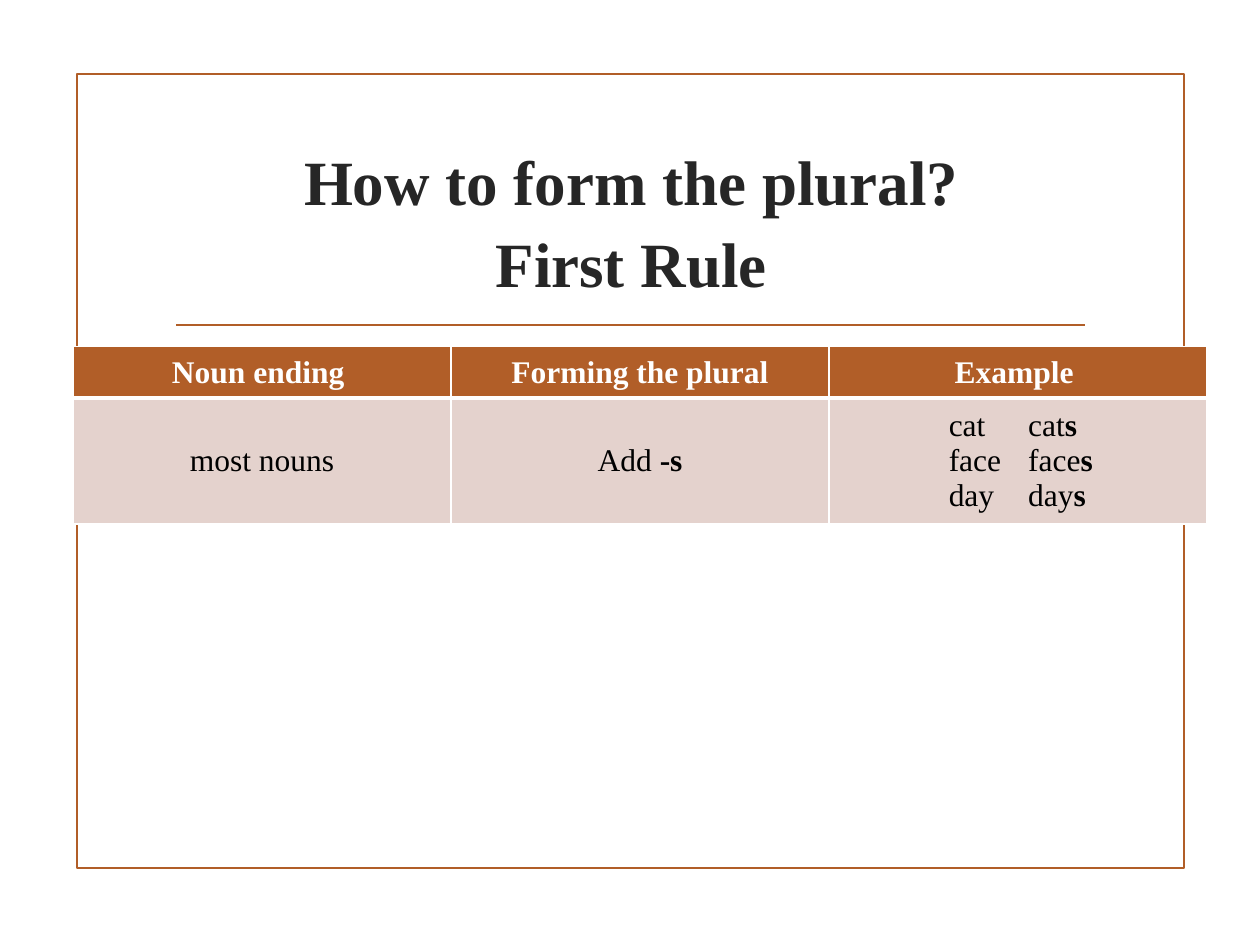
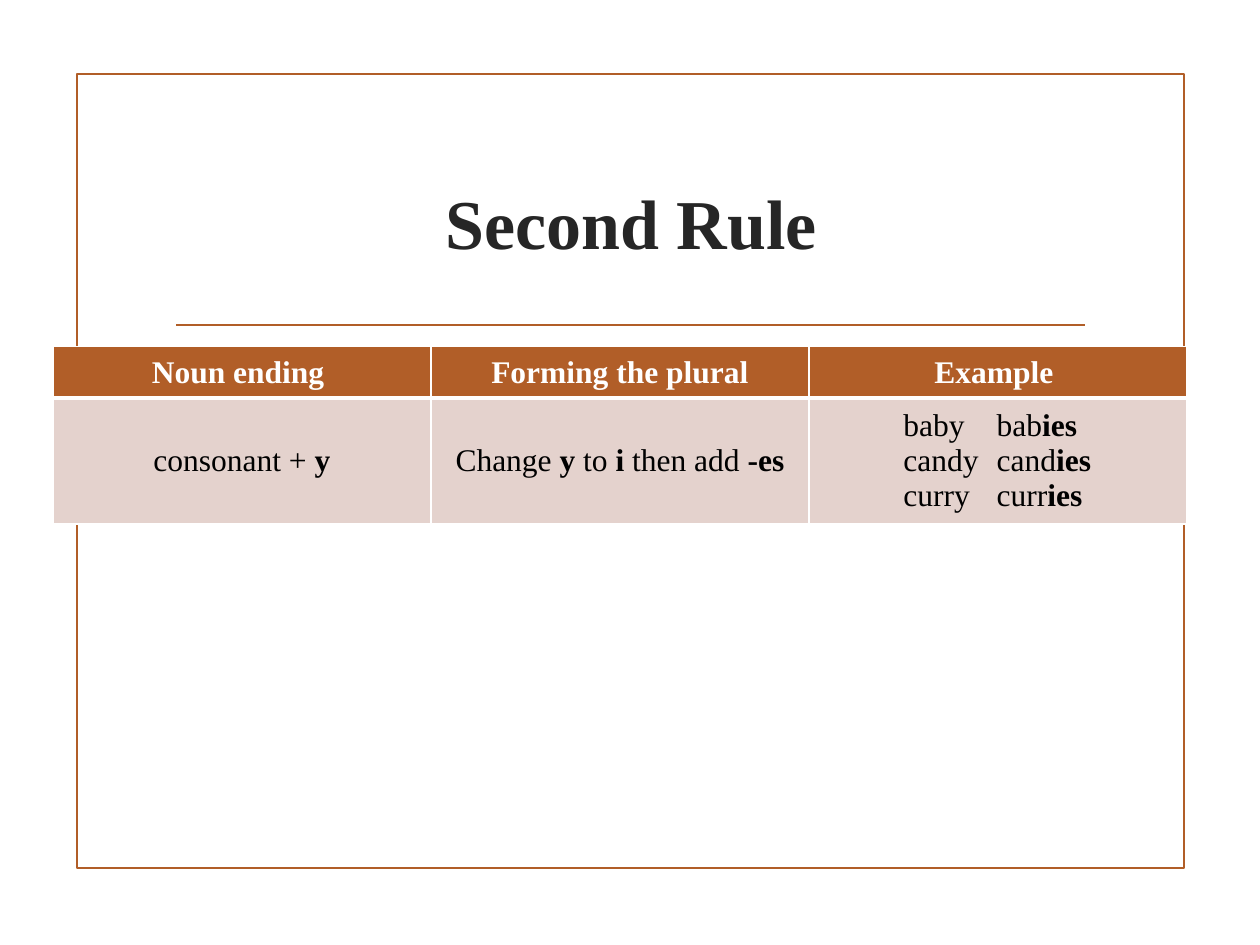
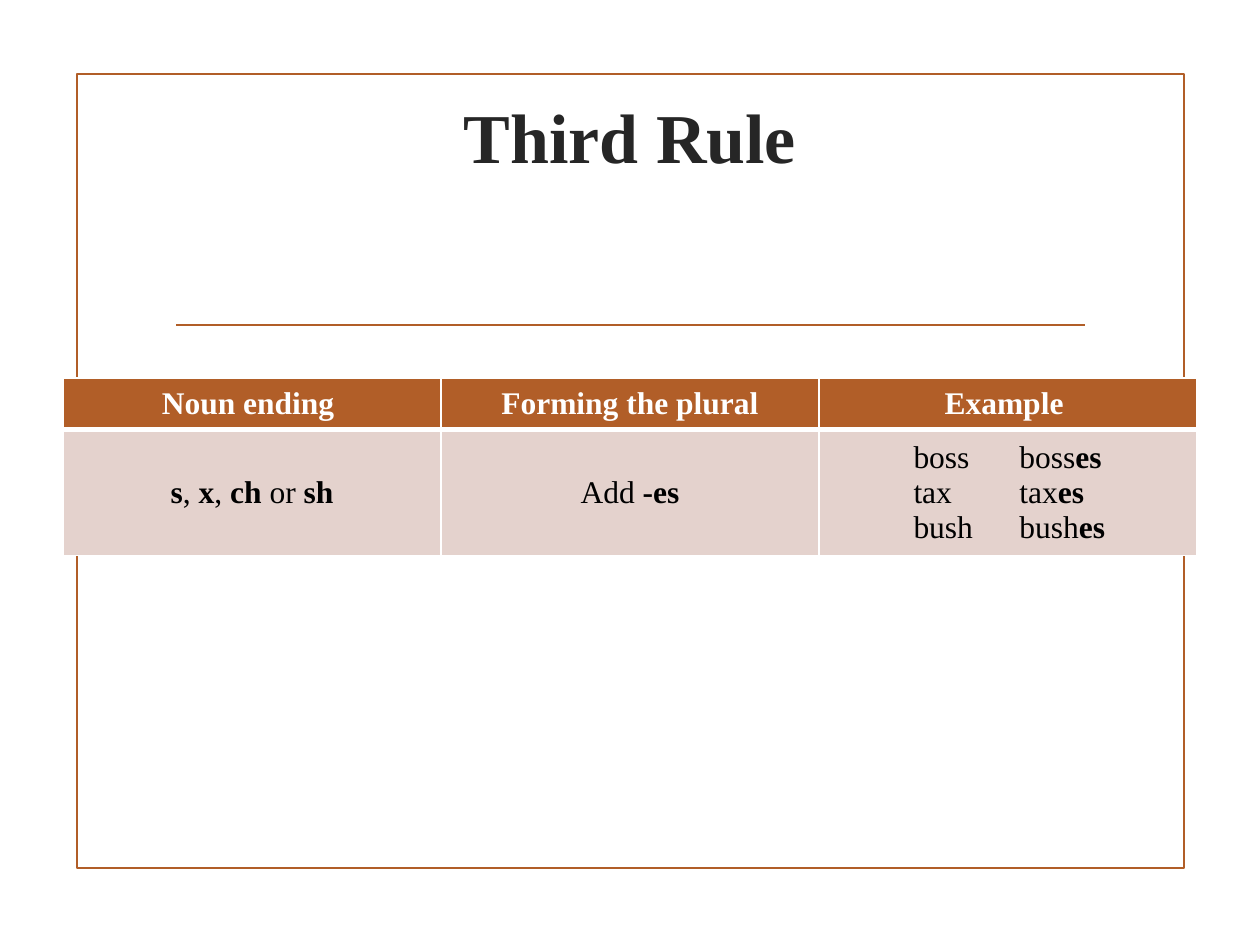
from lxml import etree
from pptx import Presentation
from pptx.dml.color import RGBColor
from pptx.enum.shapes import MSO_CONNECTOR as LINE, MSO_SHAPE as SHAPE
from pptx.enum.text import MSO_ANCHOR as ANCHOR, PP_ALIGN as ALIGN
from pptx.oxml.ns import qn
from pptx.util import Inches, Pt

FONT = "Times New Roman"
RUST, PINK, WHITE, BLACK, DARK = "B15E28", "E4D2CD", "FFFFFF", "000000", "262626"
HEADS = ["Noun ending ", "Forming the plural", "Example "]
ROWS = [0.41, 0.93]
COL = 3

# Asterisks enclose bold text; a tab parts singular and plural.
RULES = [
    dict(title="How to form the plural?\nFirst Rule", size=36,
         box=(1.29, 1.02, 7.44, 1.43), spot=(0.58, 2.75),
         cells=["most nouns", "Add *-s*",
                "cat\tcat*s*\nface\tface*s*\nday\tday*s*"],
         indent=0.95, stop=0.63),
    dict(title="Second Rule", size=40,
         box=(1.29, 1.02, 7.44, 1.43), spot=(0.42, 2.75),
         cells=["consonant + *y*", "Change *y* to *i* then add *-es*",
                "baby\tbab*ies*\ncandy\tcand*ies*\ncurry\tcurr*ies*"],
         indent=0.75, stop=0.74),
    dict(title="Third Rule", size=40,
         box=(0.5, 0.32, 9, 1.45), spot=(0.5, 3),
         cells=["*s*, *x*, *ch* or *sh*", "Add *-es*",
                "boss\tboss*es*\ntax\ttax*es*\nbush\tbush*es*"],
         indent=0.75, stop=0.84),
]


def rgb(code):
    return RGBColor.from_string(code)


def style(para, size, color, bold=None):
    font = para.font
    font.name, font.size, font.bold = FONT, Pt(size), bold
    font.color.rgb = rgb(color)


def add_frame(slide):
    """Draw the border and the rule under the title."""
    frame = slide.shapes.add_shape(
        SHAPE.RECTANGLE, *map(Inches, (0.61, 0.59, 8.79, 6.3)))
    frame.shadow.inherit = False
    frame.fill.background()
    rule = slide.shapes.add_connector(
        LINE.STRAIGHT, *map(Inches, (1.4, 2.58, 8.61, 2.58)))
    etree.SubElement(rule._element.spPr, qn("a:effectLst"))
    for item in (frame, rule):
        item.line.color.rgb = rgb(RUST)
        item.line.width = Pt(1.25)


def add_title(slide, text, size, box):
    frame = slide.shapes.add_textbox(*map(Inches, box)).text_frame
    frame.word_wrap = True
    frame.vertical_anchor = ANCHOR.MIDDLE
    para = frame.paragraphs[0]
    para.text = text
    para.alignment = ALIGN.CENTER
    para.line_spacing = 1.08
    style(para, size, DARK, True)


def add_edges(cell, base):
    """Give a cell white borders, the bottom one base points wide."""
    props = cell._tc.get_or_add_tcPr()
    for side, width in zip("LRTB", (1, 1, 1, base)):
        edge = etree.SubElement(props, qn(f"a:ln{side}"), w=str(Pt(width)))
        fill = etree.SubElement(edge, qn("a:solidFill"))
        etree.SubElement(fill, qn("a:srgbClr"), val=WHITE)


def add_stop(para, pos):
    stops = etree.SubElement(para._p.get_or_add_pPr(), qn("a:tabLst"))
    etree.SubElement(stops, qn("a:tab"), pos=str(Inches(pos)), algn="l")


def add_runs(para, text):
    """Write marked text, with bold runs and line breaks."""
    for row, line in enumerate(text.split("\n")):
        if row:
            para.add_line_break()
        for part, piece in enumerate(line.split("*")):
            if piece:
                run = para.add_run()
                run.text = piece
                run.font.bold = part % 2 == 1


def fill_cell(cell, text, head, indent, stop):
    add_edges(cell, 3 if head else 1)
    cell.fill.solid()
    cell.fill.fore_color.rgb = rgb(RUST if head else PINK)
    cell.vertical_anchor = ANCHOR.MIDDLE
    para = cell.text_frame.paragraphs[0]
    if "\t" in text:
        cell.margin_left = Inches(indent)
        para.alignment = ALIGN.LEFT
        add_stop(para, stop)
    else:
        para.alignment = ALIGN.CENTER
    if head:
        para.text = text
        style(para, 18, WHITE, True)
    else:
        add_runs(para, text)
        style(para, 18, BLACK)


def add_grid(slide, spot, cells, indent, stop):
    size = (COL * len(HEADS), sum(ROWS))
    table = slide.shapes.add_table(
        len(ROWS), len(HEADS), *map(Inches, spot + size)).table
    table.horz_banding = False
    for col in table.columns:
        col.width = Inches(COL)
    for row, (high, texts) in enumerate(zip(ROWS, (HEADS, cells))):
        table.rows[row].height = Inches(high)
        for col, text in enumerate(texts):
            fill_cell(table.cell(row, col), text, row == 0, indent, stop)


def main():
    deck = Presentation()
    deck.slide_width, deck.slide_height = Inches(10), Inches(7.5)
    for rule in RULES:
        slide = deck.slides.add_slide(deck.slide_layouts[6])
        add_frame(slide)
        add_title(slide, rule["title"], rule["size"], rule["box"])
        add_grid(slide, rule["spot"], rule["cells"],
                 rule["indent"], rule["stop"])
    deck.save("out.pptx")


if __name__ == "__main__":
    main()
